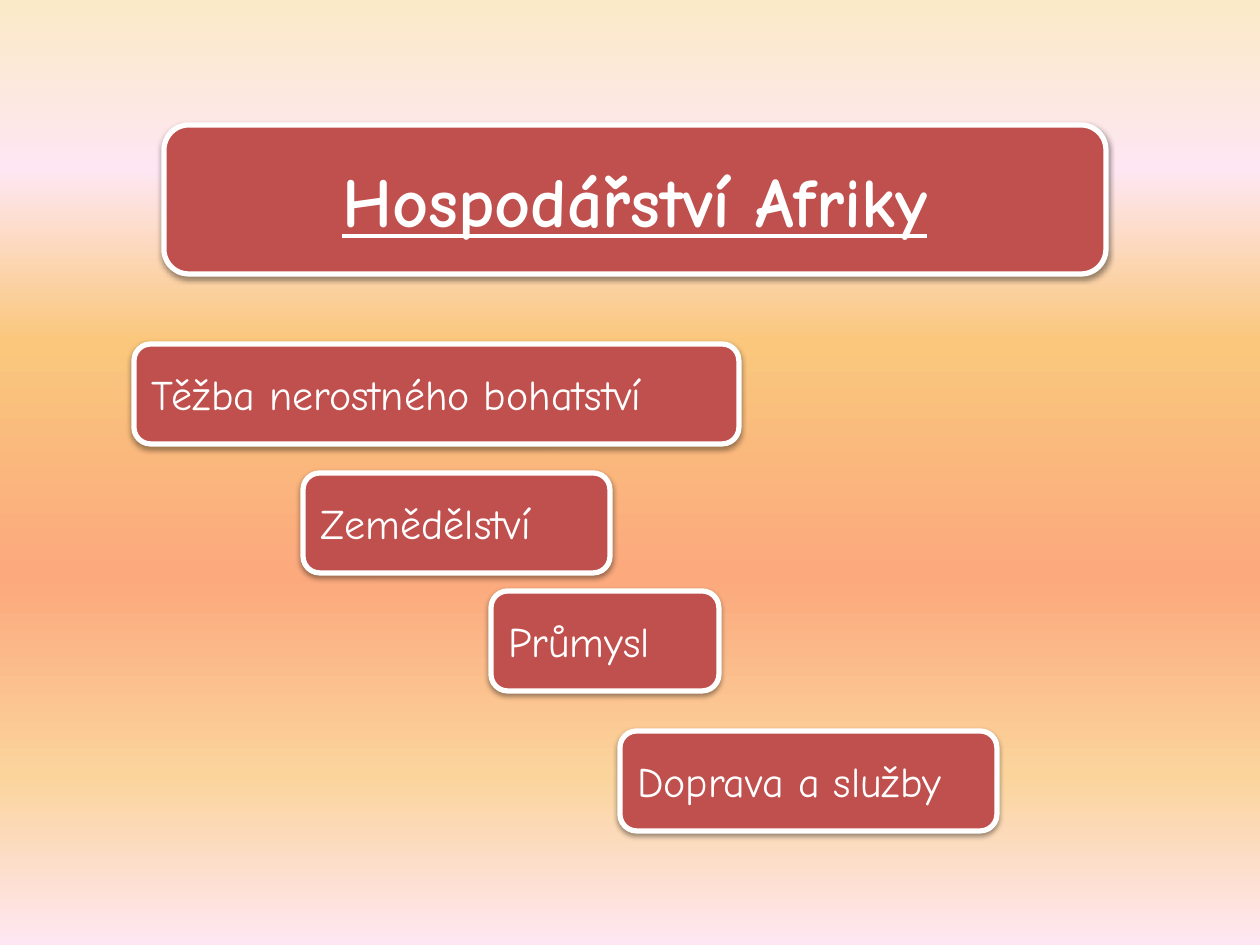
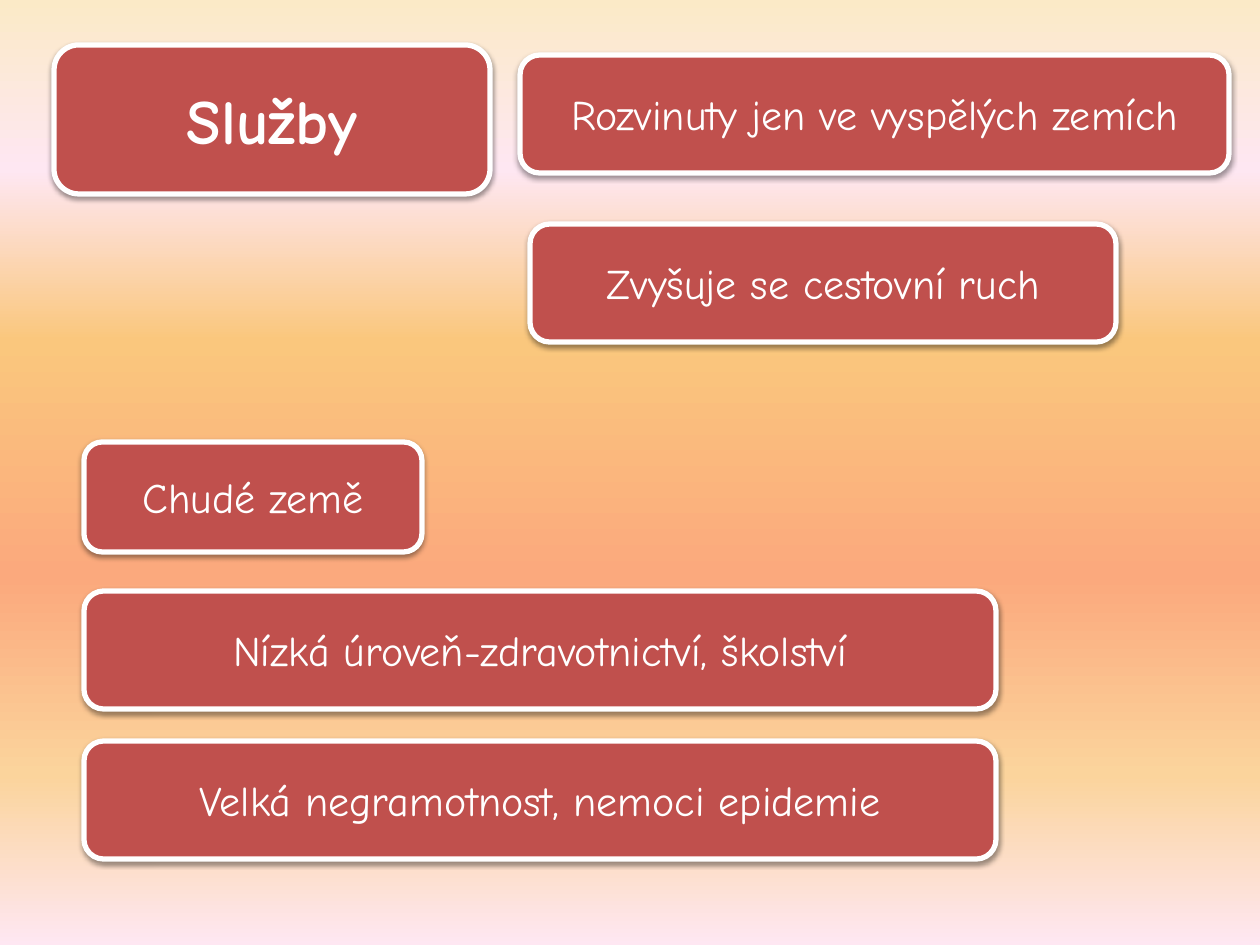
from dataclasses import dataclass

from lxml import etree
from pptx import Presentation
from pptx import util as u
from pptx.dml.color import RGBColor
from pptx.enum import shapes, text
from pptx.oxml import ns

# Scale: 126 px to the inch
PX = u.Inches(1) / 126
SLIDE_W, SLIDE_H = 1260, 945

# Shared style
FONT = "Comic Neue"
RED = RGBColor(0xC0, 0x50, 0x4D)
WHITE = RGBColor(0xFF, 0xFF, 0xFF)
BLACK = RGBColor(0x00, 0x00, 0x00)
CREAM = RGBColor(0xFB, 0xEA, 0xC7)
PINK = RGBColor(0xFE, 0xE7, 0xF2)
AMBER = RGBColor(0xFA, 0xC7, 0x7D)
CORAL = RGBColor(0xFB, 0xA9, 0x7D)
SAND = RGBColor(0xFB, 0xD4, 0x9C)
SUNSET = [(0, CREAM), (18, PINK), (36, AMBER), (61, CORAL), (82, SAND), (100, PINK)]

LEFT, CENTER = text.PP_ALIGN.LEFT, text.PP_ALIGN.CENTER
TITLE_H, TOPIC_H, FACT_H = 149, 100, 118
POOR_X, POOR_W = 84, 912


@dataclass(frozen=True)
class Box:
    words: str
    x: int
    y: int
    w: int
    h: int
    size: int = 24
    align: text.PP_ALIGN = CENTER
    bold: bool = False
    underline: bool = False


ECONOMY = [
    Box("Hospodářství Afriky", 164, 125, 942, TITLE_H, 40, bold=True, underline=True),
    Box("Těžba nerostného bohatství", 134, 344, 605, TOPIC_H, align=LEFT),
    Box("Zemědělství", 303, 473, 307, TOPIC_H, align=LEFT),
    Box("Průmysl", 491, 591, 228, TOPIC_H, align=LEFT),
    Box("Doprava a služby", 620, 731, 377, TOPIC_H, align=LEFT),
]
SERVICES = [
    Box("Služby", 54, 45, 436, TITLE_H, 36, bold=True),
    Box("Nízká úroveň-zdravotnictví, školství", POOR_X, 591, POOR_W, FACT_H),
    Box("Rozvinuty jen ve vyspělých zemích", 520, 55, 709, FACT_H),
    Box("Chudé země", POOR_X, 442, 338, 110),
    Box("Zvyšuje se cestovní ruch", 530, 224, 586, FACT_H),
    Box("Velká negramotnost, nemoci epidemie", POOR_X, 741, POOR_W, FACT_H),
]


def px(n: int) -> u.Emu:
    return u.Emu(round(n * PX))


def add_node(parent, tag: str, **attrs):
    values = {name: str(value) for name, value in attrs.items()}
    return etree.SubElement(parent, ns.qn(tag), values)


def paint_background(s) -> None:
    """Fill the slide with the sunset gradient, top to bottom."""
    fill = s.background.fill
    fill.gradient()
    fill.gradient_angle = 270
    stops = s.element.find(".//" + ns.qn("a:gsLst"))
    for stop in list(stops):
        stops.remove(stop)
    for percent, color in SUNSET:
        stop = add_node(stops, "a:gs", pos=percent * 1000)
        add_node(stop, "a:srgbClr", val=color)


def add_shadow(sp) -> None:
    sp.shadow.inherit = False
    effects = sp.element.spPr.find(ns.qn("a:effectLst"))
    shadow = add_node(effects, "a:outerShdw", blurRad=u.Pt(3.1), dist=u.Pt(1.6),
                      dir=5400000, rotWithShape=0)
    color = add_node(shadow, "a:srgbClr", val=BLACK)
    add_node(color, "a:alpha", val=38000)


def write(tf, words: str, *, size: int, align: text.PP_ALIGN,
          bold: bool = False, underline: bool = False) -> None:
    tf.word_wrap = True
    tf.vertical_anchor = text.MSO_ANCHOR.MIDDLE
    p = tf.paragraphs[0]
    p.alignment = align
    r = p.add_run()
    r.text = words
    r.font.name = FONT
    r.font.size = u.Pt(size)
    r.font.bold = bold
    r.font.underline = underline
    r.font.color.rgb = WHITE


def add_box(s, box: Box) -> None:
    sp = s.shapes.add_shape(shapes.MSO_SHAPE.ROUNDED_RECTANGLE,
                            px(box.x), px(box.y), px(box.w), px(box.h))
    sp.fill.solid()
    sp.fill.fore_color.rgb = RED
    sp.line.color.rgb = WHITE
    sp.line.width = u.Pt(3)
    add_shadow(sp)
    write(sp.text_frame, box.words, size=box.size, align=box.align,
          bold=box.bold, underline=box.underline)


def main() -> None:
    prs = Presentation()
    prs.slide_width, prs.slide_height = px(SLIDE_W), px(SLIDE_H)
    for boxes in (ECONOMY, SERVICES):
        s = prs.slides.add_slide(prs.slide_layouts[6])
        paint_background(s)
        for box in boxes:
            add_box(s, box)
    prs.save("out.pptx")


if __name__ == "__main__":
    main()
